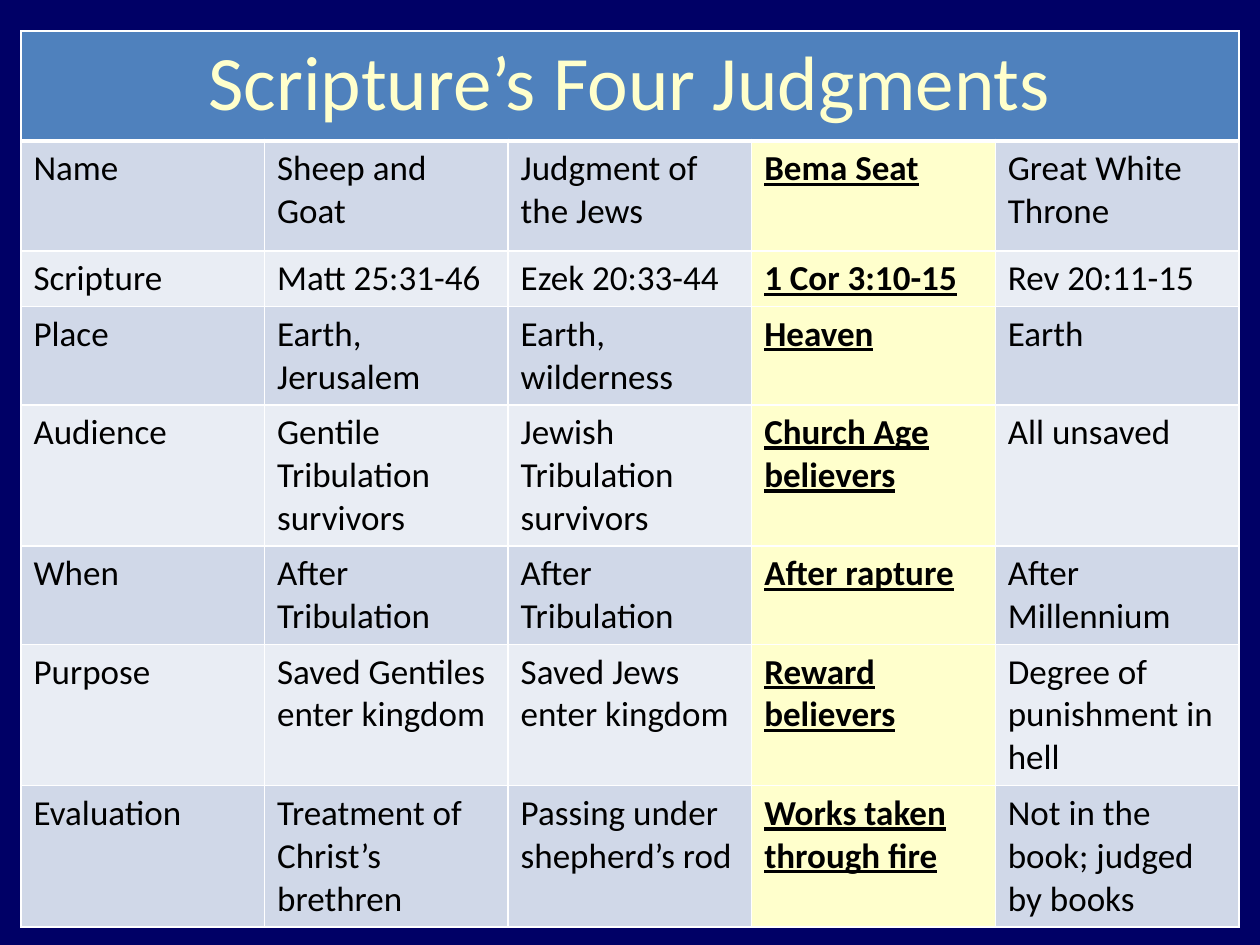
"""Build a slide with a table comparing the four judgments in Scripture."""
from dataclasses import dataclass

from lxml import etree
from pptx import Presentation
from pptx.dml.color import RGBColor
from pptx.enum.text import PP_ALIGN
from pptx.oxml.ns import qn
from pptx.util import Pt

CENTER, LEFT = PP_ALIGN.CENTER, PP_ALIGN.LEFT

TITLE = "Scripture’s Four Judgments"
JUDGMENTS = [
    ("Name", "Sheep and Goat", "Judgment of the Jews", "Bema Seat", "Great White Throne"),
    ("Scripture", "Matt 25:31-46", "Ezek 20:33-44", "1 Cor 3:10-15", "Rev 20:11-15"),
    ("Place", "Earth, Jerusalem", "Earth, wilderness", "Heaven", "Earth"),
    ("Audience", "Gentile Tribulation survivors", "Jewish Tribulation survivors",
     "Church Age believers", "All unsaved"),
    ("When", "After Tribulation", "After Tribulation", "After rapture", "After Millennium"),
    ("Purpose", "Saved Gentiles enter kingdom", "Saved Jews enter kingdom",
     "Reward believers", "Degree of punishment in hell"),
    ("Evaluation", "Treatment of Christ’s brethren", "Passing under shepherd’s rod",
     "Works taken through fire", "Not in the book; judged by books"),
]
HIGHLIGHTED_COLUMN = 3
ROW_HEIGHTS = [110, 110, 52, 89, 127, 89, 127, 127]
SLIDE_SIZE = (1260, 945)
TABLE_LEFT, TABLE_TOP, TABLE_WIDTH = 21, 31, 1218
EMU_PER_PX = 914400 / 126


@dataclass(frozen=True)
class Theme:
    font: str = "Calibri"
    background: str = "000066"
    header: str = "4F81BD"
    bands: tuple = ("D0D8E8", "E9EDF4")
    highlight: str = "FFFFCC"
    text: str = "000000"
    border: str = "FFFFFF"
    title_size: int = 44
    body_size: int = 20
    thin: int = 1
    thick: int = 3


THEME = Theme()


def px(length):
    return round(length * EMU_PER_PX)


def set_borders(cell, top, bottom):
    properties = cell._tc.get_or_add_tcPr()
    widths = {"a:lnL": THEME.thin, "a:lnR": THEME.thin, "a:lnT": top, "a:lnB": bottom}
    for position, (tag, width) in enumerate(widths.items()):
        line = etree.Element(qn(tag), w=str(Pt(width)))
        fill = etree.SubElement(line, qn("a:solidFill"))
        etree.SubElement(fill, qn("a:srgbClr"), val=THEME.border)
        properties.insert(position, line)


def fill_cell(cell, color, top=THEME.thin, bottom=THEME.thin):
    cell.fill.solid()
    cell.fill.fore_color.rgb = RGBColor.from_string(color)
    set_borders(cell, top, bottom)


def write(cell, text, size, color, align=LEFT, emphasis=False):
    paragraph = cell.text_frame.paragraphs[0]
    paragraph.text = text
    paragraph.alignment = align
    font = paragraph.runs[0].font
    font.name, font.size = THEME.font, Pt(size)
    font.bold = font.underline = emphasis
    font.color.rgb = RGBColor.from_string(color)


def add_judgment_table(slide):
    columns = len(JUDGMENTS[0])
    table = slide.shapes.add_table(
        len(ROW_HEIGHTS), columns, px(TABLE_LEFT), px(TABLE_TOP),
        px(TABLE_WIDTH), px(sum(ROW_HEIGHTS))).table
    for column in table.columns:
        column.width = px(TABLE_WIDTH / columns)
    for row, height in zip(table.rows, ROW_HEIGHTS):
        row.height = px(height)

    for column in range(columns):
        fill_cell(table.cell(0, column), THEME.header, bottom=THEME.thick)
    title = table.cell(0, 0)
    title.merge(table.cell(0, columns - 1))
    write(title, TITLE, THEME.title_size, THEME.highlight, CENTER)

    for row, entries in enumerate(JUDGMENTS, start=1):
        band = THEME.bands[(row - 1) % 2]
        top = THEME.thick if row == 1 else THEME.thin
        for column, entry in enumerate(entries):
            highlighted = column == HIGHLIGHTED_COLUMN
            cell = table.cell(row, column)
            fill_cell(cell, THEME.highlight if highlighted else band, top=top)
            write(cell, entry, THEME.body_size, THEME.text, emphasis=highlighted)


def main():
    deck = Presentation()
    deck.slide_width, deck.slide_height = map(px, SLIDE_SIZE)
    slide = deck.slides.add_slide(deck.slide_layouts[6])
    slide.background.fill.solid()
    slide.background.fill.fore_color.rgb = RGBColor.from_string(THEME.background)
    add_judgment_table(slide)
    deck.save("out.pptx")


if __name__ == "__main__":
    main()
